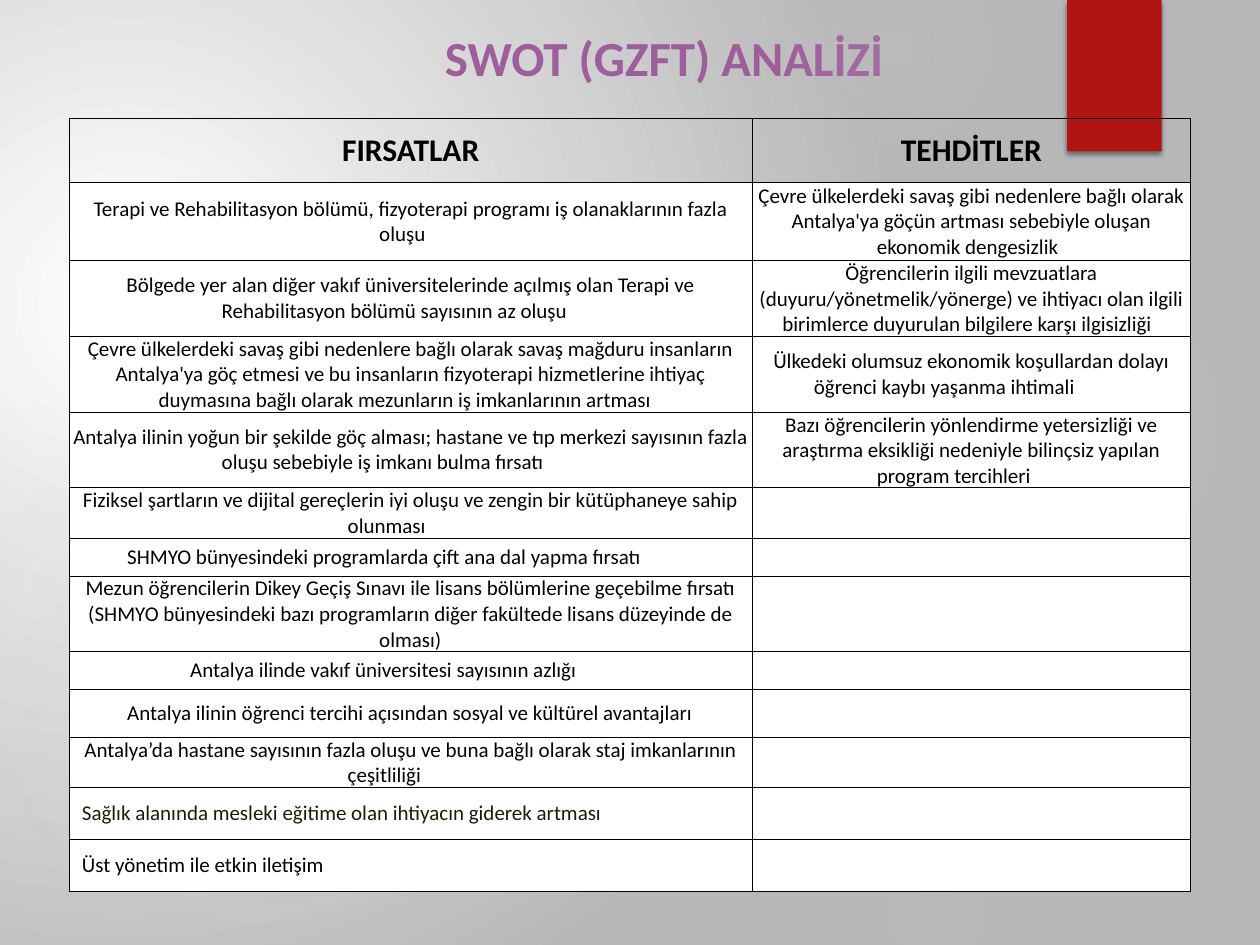
from lxml import etree
from pptx import Presentation
from pptx.dml.color import RGBColor
from pptx.enum.shapes import MSO_SHAPE
from pptx.enum.text import MSO_ANCHOR, MSO_AUTO_SIZE, PP_ALIGN
from pptx.oxml import parse_xml
from pptx.util import Inches, Pt

OVAL, RECTANGLE = MSO_SHAPE.OVAL, MSO_SHAPE.RECTANGLE
MIDDLE = MSO_ANCHOR.MIDDLE
CENTER, LEFT = PP_ALIGN.CENTER, PP_ALIGN.LEFT
FIT_SHAPE = MSO_AUTO_SIZE.SHAPE_TO_FIT_TEXT
NAMESPACE = "http://schemas.openxmlformats.org/drawingml/2006/main"
FONT = "Calibri"
TITLE_ONLY = 5

COLORS = {
    "white": "FFFFFF", "black": "000000", "backdrop": "B7B7B7", "glow": "D9D9D9",
    "ribbon": "B01513", "title": "9E5E9B", "green": "122204",
}

GLOWS = [
    (6.89, 1.83, 3.08, [(0, 7), (36, 6), (69, 0)]),
    (6.22, -0.5, 1.75, [(0, 14), (36, 7), (73, 0)]),
    (6.89, 6.67, 1.08, [(0, 9), (36, 5), (66, 0)]),
    (-0.17, 2.92, 4.58, [(0, 11), (36, 10), (75, 0)]),
    (-0.92, 3.17, 2.58, [(0, 8), (36, 8), (72, 0)]),
]

HEADERS = ["FIRSATLAR", "TEHDİTLER"]
OPPORTUNITIES = [
    "Terapi ve Rehabilitasyon bölümü, fizyoterapi programı iş olanaklarının fazla oluşu",
    "Bölgede yer alan diğer vakıf üniversitelerinde açılmış olan Terapi ve Rehabilitasyon "
    "bölümü sayısının az oluşu",
    "Çevre ülkelerdeki savaş gibi nedenlere bağlı olarak savaş mağduru insanların Antalya'ya "
    "göç etmesi ve bu insanların fizyoterapi hizmetlerine ihtiyaç duymasına bağlı olarak "
    "mezunların iş imkanlarının artması",
    "Antalya ilinin yoğun bir şekilde göç alması; hastane ve tıp merkezi sayısının fazla "
    "oluşu sebebiyle iş imkanı bulma fırsatı",
    "Fiziksel şartların ve dijital gereçlerin iyi oluşu ve zengin bir kütüphaneye sahip olunması",
    "SHMYO bünyesindeki programlarda çift ana dal yapma fırsatı",
    "Mezun öğrencilerin Dikey Geçiş Sınavı ile lisans bölümlerine geçebilme fırsatı (SHMYO "
    "bünyesindeki bazı programların diğer fakültede lisans düzeyinde de olması)",
    "Antalya ilinde vakıf üniversitesi sayısının azlığı",
    "Antalya ilinin öğrenci tercihi açısından sosyal ve kültürel avantajları",
    "Antalya’da hastane sayısının fazla oluşu ve buna bağlı olarak staj imkanlarının çeşitliliği",
]
LEFT_OPPORTUNITIES = [
    ("Sağlık alanında mesleki eğitime olan ihtiyacın giderek artması", "green"),
    ("Üst yönetim ile etkin iletişim", "black"),
]
THREATS = [
    "Çevre ülkelerdeki savaş gibi nedenlere bağlı olarak Antalya'ya göçün artması sebebiyle "
    "oluşan ekonomik dengesizlik",
    "Öğrencilerin ilgili mevzuatlara (duyuru/yönetmelik/yönerge) ve ihtiyacı olan ilgili "
    "birimlerce duyurulan bilgilere karşı ilgisizliği",
    "Ülkedeki olumsuz ekonomik koşullardan dolayı öğrenci kaybı yaşanma ihtimali",
    "Bazı öğrencilerin yönlendirme yetersizliği ve araştırma eksikliği nedeniyle bilinçsiz "
    "yapılan program tercihleri",
]
COLUMN_WIDTHS = [5.42, 3.48]
ROW_HEIGHTS = [0.51, 0.62, 0.6, 0.6, 0.6, 0.4, 0.3, 0.6, 0.3, 0.38, 0.4, 0.41, 0.41]


def color(name):
    return RGBColor.from_string(COLORS[name])


def set_font(paragraph, size, name, bold=False):
    font = paragraph.font
    font.name, font.size, font.bold = FONT, Pt(size), bold
    font.color.rgb = color(name)


def set_radial_fill(fill, element, stops, focus):
    fill.background()
    empty_fill = element.xpath(".//a:noFill")[0]
    stop_xml = "".join(
        f'<a:gs pos="{position * 1000}"><a:srgbClr val="{COLORS[name]}">'
        f'<a:alpha val="{opacity * 1000}"/></a:srgbClr></a:gs>'
        for position, name, opacity in stops
    )
    sides = " ".join(f'{side}="{value * 1000}"' for side, value in zip("ltrb", focus))
    gradient = parse_xml(
        f'<a:gradFill xmlns:a="{NAMESPACE}" rotWithShape="1"><a:gsLst>{stop_xml}</a:gsLst>'
        f'<a:path path="circle"><a:fillToRect {sides}/></a:path></a:gradFill>'
    )
    empty_fill.getparent().replace(empty_fill, gradient)


def add_plain_shape(page, kind, left, top, width, height):
    shape = page.shapes.add_shape(
        kind, Inches(left), Inches(top), Inches(width), Inches(height))
    shape.shadow.inherit = False
    shape.line.fill.background()
    return shape


def add_glow(page, left, top, size, levels):
    glow = add_plain_shape(page, OVAL, left, top, size, size)
    stops = [(position, "glow", opacity) for position, opacity in levels]
    set_radial_fill(glow.fill, glow.element, stops, (50, 50, 50, 50))


def add_ribbon(page):
    ribbon = add_plain_shape(page, RECTANGLE, 8.47, 0, 0.75, 1.2)
    ribbon.fill.solid()
    ribbon.fill.fore_color.rgb = color("ribbon")
    ribbon.element.xpath(".//a:effectLst")[0].append(parse_xml(
        f'<a:outerShdw xmlns:a="{NAMESPACE}" blurRad="{Pt(3)}" dist="{Pt(2)}" dir="5400000" '
        f'rotWithShape="0"><a:srgbClr val="{COLORS["black"]}"><a:alpha val="45000"/>'
        '</a:srgbClr></a:outerShdw>'
    ))


def set_title(page):
    title = page.shapes.title
    title.left, title.top = Inches(2.86), Inches(0.17)
    title.width, title.height = Inches(4.82), Inches(0.57)
    frame = title.text_frame
    frame.text = "SWOT (GZFT) ANALİZİ"
    frame.auto_size = FIT_SHAPE
    paragraph = frame.paragraphs[0]
    paragraph.alignment = CENTER
    set_font(paragraph, 28, "title", bold=True)


def set_borders(cell):
    properties = cell._tc.get_or_add_tcPr()
    for index, side in enumerate("LRTB"):
        border = etree.Element(f"{{{NAMESPACE}}}ln{side}", w=str(Pt(0.5)))
        fill = etree.SubElement(border, f"{{{NAMESPACE}}}solidFill")
        etree.SubElement(fill, f"{{{NAMESPACE}}}srgbClr", val=COLORS["black"])
        properties.insert(index, border)


def fill_cell(cell, text="", name="black", alignment=CENTER, margin=0, header=False):
    cell.margin_left = cell.margin_right = Inches(margin)
    cell.margin_top = cell.margin_bottom = Inches(margin)
    cell.vertical_anchor = MIDDLE
    cell.text = text
    paragraph = cell.text_frame.paragraphs[0]
    paragraph.alignment = alignment
    set_font(paragraph, 18 if header else 12, name, bold=header)
    if header:
        cell.fill.background()
    else:
        cell.fill.solid()
        cell.fill.fore_color.rgb = color("white")
    set_borders(cell)


def add_swot_table(page):
    table = page.shapes.add_table(
        len(ROW_HEIGHTS), len(COLUMN_WIDTHS), Inches(0.55), Inches(0.94),
        Inches(sum(COLUMN_WIDTHS)), Inches(sum(ROW_HEIGHTS))).table
    table.first_row = table.horz_banding = False
    for column, width in zip(table.columns, COLUMN_WIDTHS):
        column.width = Inches(width)
    for row, height in zip(table.rows, ROW_HEIGHTS):
        row.height = Inches(height)
    for column, header in enumerate(HEADERS):
        fill_cell(table.cell(0, column), header, header=True)
    for row, text in enumerate(OPPORTUNITIES, 1):
        fill_cell(table.cell(row, 0), text + "\t")
    for row, (text, name) in enumerate(LEFT_OPPORTUNITIES, len(OPPORTUNITIES) + 1):
        fill_cell(table.cell(row, 0), text, name, LEFT, 0.1)
    for row, text in enumerate(THREATS, 1):
        fill_cell(table.cell(row, 1), text + "\t")
    for row in range(len(THREATS) + 1, len(ROW_HEIGHTS)):
        fill_cell(table.cell(row, 1))


def main():
    deck = Presentation()
    deck.slide_width, deck.slide_height = Inches(10), Inches(7.5)
    page = deck.slides.add_slide(deck.slide_layouts[TITLE_ONLY])
    set_radial_fill(page.background.fill, page.element,
                    [(0, "white", 100), (100, "backdrop", 100)], (45, 65, 125, 100))
    for glow in GLOWS:
        add_glow(page, *glow)
    add_ribbon(page)
    set_title(page)
    add_swot_table(page)
    deck.save("out.pptx")


if __name__ == "__main__":
    main()
